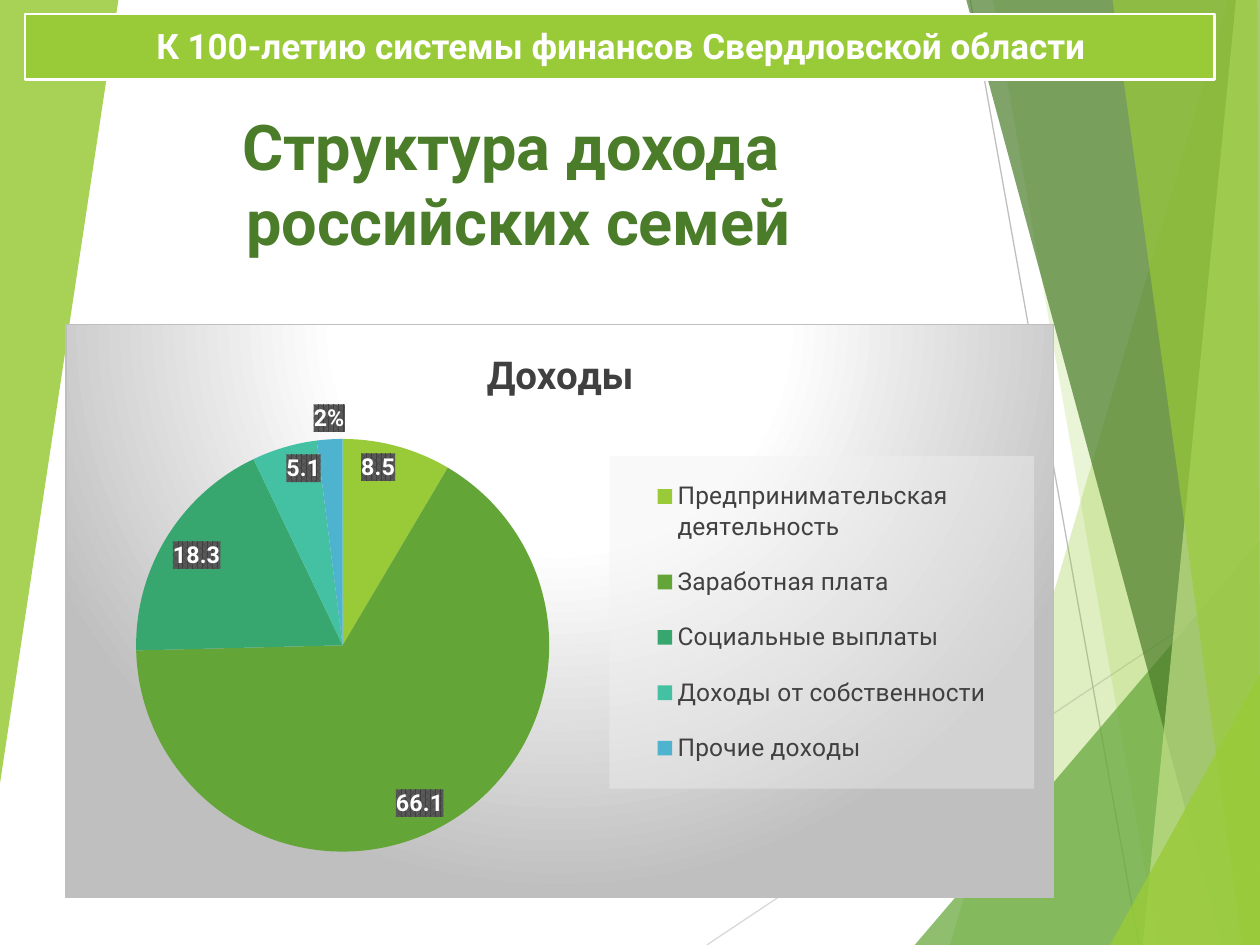
from lxml.etree import SubElement
from pptx import Presentation
from pptx.chart.data import CategoryChartData
from pptx.dml.color import RGBColor
from pptx.enum.chart import XL_CHART_TYPE, XL_LABEL_POSITION, XL_LEGEND_POSITION
from pptx.enum.shapes import MSO_CONNECTOR, MSO_SHAPE
from pptx.enum.text import MSO_ANCHOR, PP_ALIGN
from pptx.oxml import parse_xml
from pptx.oxml.ns import nsdecls, qn
from pptx.util import Pt

FONT = "Roboto"
LIME, GREEN, DARK = "99CB38", "63A537", "4A7C29"
WHITE, GRAY, SILVER = "FFFFFF", "404040", "BFBFBF"
WIDE, HIGH = 720, 540

RAYS = [
    ("D9D9D9", (403.9, HIGH), (WIDE, 329)),
    (SILVER, (554.4, 0), (650.9, HIGH)),
]
FACETS = [
    (LIME, 30, [(702, 0), (542.9, HIGH), (WIDE, HIGH), (WIDE, 0)]),
    (LIME, 20, [(567.4, 0), (661.7, HIGH), (WIDE, HIGH), (WIDE, 0)]),
    (GREEN, 72, [(522.7, HIGH), (WIDE, 308.9), (WIDE, HIGH)]),
    (DARK, 70, [(552.2, 0), (698.4, HIGH), (WIDE, HIGH), (WIDE, 0)]),
    ("C2E088", 70, [(706.3, 0), (653, HIGH), (WIDE, HIGH), (WIDE, 0)]),
    (LIME, 65, [(635.8, 0), (709.9, HIGH), (WIDE, HIGH), (718.6, 0)]),
    (LIME, 80, [(634.3, HIGH), (WIDE, 385.2), (WIDE, HIGH)]),
    (LIME, 85, [(0, 0), (67.7, 0), (0, 447.8)]),
]
INCOME = [
    ("Предпринимательская деятельность", 8.5, LIME),
    ("Заработная плата", 66.1, GREEN),
    ("Социальные выплаты", 18.3, "37A76F"),
    ("Доходы от собственности", 5.1, "44C1A3"),
    ("Прочие доходы", 2, "4EB3CF"),
]


def paint(fill, color, alpha=100):
    fill.solid()
    fill.fore_color.rgb = RGBColor.from_string(color)
    if alpha < 100:
        tone = fill._xPr.find(".//" + qn("a:srgbClr"))
        SubElement(tone, qn("a:alpha")).set("val", str(alpha * 1000))


def style(font, size, color, bold=False):
    font.name = FONT
    font.size = Pt(size)
    font.bold = bold
    font.color.rgb = RGBColor.from_string(color)


def add_ray(slide, color, start, end):
    ray = slide.shapes.add_connector(
        MSO_CONNECTOR.STRAIGHT, *[Pt(n) for n in start + end])
    ray.line.color.rgb = RGBColor.from_string(color)
    ray.line.width = Pt(0.75)
    SubElement(ray._element.spPr, qn("a:effectLst"))


def add_facet(slide, color, alpha, points):
    first, *rest = [(Pt(x), Pt(y)) for x, y in points]
    pen = slide.shapes.build_freeform(*first)
    pen.add_line_segments(rest)
    facet = pen.convert_to_shape()
    facet.shadow.inherit = False
    facet.line.fill.background()
    paint(facet.fill, color, alpha)


def add_bar(slide, box):
    bar = slide.shapes.add_shape(MSO_SHAPE.RECTANGLE, *[Pt(n) for n in box])
    bar.shadow.inherit = False
    paint(bar.fill, LIME)
    paint(bar.line.fill, WHITE)
    bar.line.width = Pt(1.5)


def add_text(slide, box, text, size, color, anchor, space=1):
    frame = slide.shapes.add_textbox(*[Pt(n) for n in box]).text_frame
    frame.word_wrap = True
    frame.vertical_anchor = anchor
    line = frame.paragraphs[0]
    line.text = text
    line.alignment = PP_ALIGN.CENTER
    line.line_spacing = space
    style(line.font, size, color, True)


def make_props(fill, line="<a:ln><a:noFill/></a:ln>"):
    return parse_xml(f'<c:spPr {nsdecls("c", "a")}>{fill}{line}</c:spPr>')


def make_color(color, extra=""):
    return f'<a:srgbClr val="{color}">{extra}</a:srgbClr>'


def make_layout(x, y, w, h, inner=False):
    target = '<c:layoutTarget val="inner"/>' if inner else ""
    sizes = "".join(f'<c:{k} val="{v}"/>' for k, v in zip("xywh", (x, y, w, h)))
    return parse_xml(
        f'<c:layout {nsdecls("c")}><c:manualLayout>{target}'
        f'<c:xMode val="edge"/><c:yMode val="edge"/>{sizes}'
        '</c:manualLayout></c:layout>')


def drop_layout(node):
    for old in node.findall(qn("c:layout")):
        node.remove(old)


def add_label(point, percent):
    label = point.data_label
    style(label.font, 13.3, WHITE, True)
    spot = XL_LABEL_POSITION
    label.position = spot.OUTSIDE_END if percent else spot.INSIDE_END
    node = label._get_or_add_dLbl()
    node.find(qn("c:showVal")).set("val", str(int(not percent)))
    node.find(qn("c:showPercent")).set("val", str(int(percent)))
    fill = (f'<a:pattFill prst="pct75"><a:fgClr>{make_color(GRAY)}</a:fgClr>'
            f'<a:bgClr>{make_color("595959")}</a:bgClr></a:pattFill>')
    node.find(qn("c:txPr")).addprevious(make_props(fill))


def style_legend(chart):
    chart.has_legend = True
    legend = chart.legend
    legend.position = XL_LEGEND_POSITION.RIGHT
    legend.include_in_layout = False
    style(legend.font, 14, GRAY)
    node = legend._element
    drop_layout(node)
    node.find(qn("c:legendPos")).addnext(make_layout(0.55, 0.23, 0.43, 0.58))
    veil = make_color("F2F2F2", '<a:alpha val="39000"/>')
    node.find(qn("c:overlay")).addnext(
        make_props(f"<a:solidFill>{veil}</a:solidFill>"))


def style_frame(chart):
    stops = "".join(
        f'<a:gs pos="{at * 1000}">{make_color(color)}</a:gs>'
        for at, color in [(0, WHITE), (39, WHITE), (100, SILVER)])
    fill = (f'<a:gradFill><a:gsLst>{stops}</a:gsLst><a:path path="circle">'
            '<a:fillToRect l="50000" t="-80000" r="50000" b="180000"/>'
            '</a:path></a:gradFill>')
    line = (f'<a:ln w="{Pt(0.75)}"><a:solidFill>{make_color(SILVER)}'
            '</a:solidFill></a:ln>')
    root = chart._chartSpace
    root.find(qn("c:chart")).addnext(make_props(fill, line))
    area = root.find(".//" + qn("c:plotArea"))
    drop_layout(area)
    area.insert(0, make_layout(0.07, 0.2, 0.42, 0.72, True))


def add_pie(slide, box):
    names, values, colors = zip(*INCOME)
    data = CategoryChartData()
    data.categories = names
    data.add_series("Доходы", values)
    chart = slide.shapes.add_chart(
        XL_CHART_TYPE.PIE, *[Pt(n) for n in box], data).chart
    style(chart.font, 10, "000000")
    chart.has_title = True
    title = chart.chart_title.text_frame
    title.text = "Доходы"
    style(title.paragraphs[0].font, 22, GRAY, True)
    plot = chart.plots[0]
    plot.vary_by_categories = True
    for i, color in enumerate(colors):
        point = plot.series[0].points[i]
        paint(point.format.fill, color)
        point.format.line.fill.background()
        add_label(point, i == len(colors) - 1)
    style_legend(chart)
    style_frame(chart)


def main():
    deck = Presentation()
    deck.slide_width, deck.slide_height = Pt(WIDE), Pt(HIGH)
    slide = deck.slides.add_slide(deck.slide_layouts[6])
    for ray in RAYS:
        add_ray(slide, *ray)
    for facet in FACETS:
        add_facet(slide, *facet)
    add_text(slide, (17.3, 66.2, 558, 85), "Структура дохода \vроссийских семей",
             36, DARK, MSO_ANCHOR.BOTTOM)
    add_bar(slide, (14.4, 7.9, 679.7, 37.4))
    add_text(slide, (15.1, 7.9, 679.7, 39.6),
             "К 100-летию системы финансов Свердловской области",
             20, WHITE, MSO_ANCHOR.MIDDLE, 0.9)
    add_pie(slide, (37.4, 185, 565.2, 328.3))
    deck.save("out.pptx")


if __name__ == "__main__":
    main()
